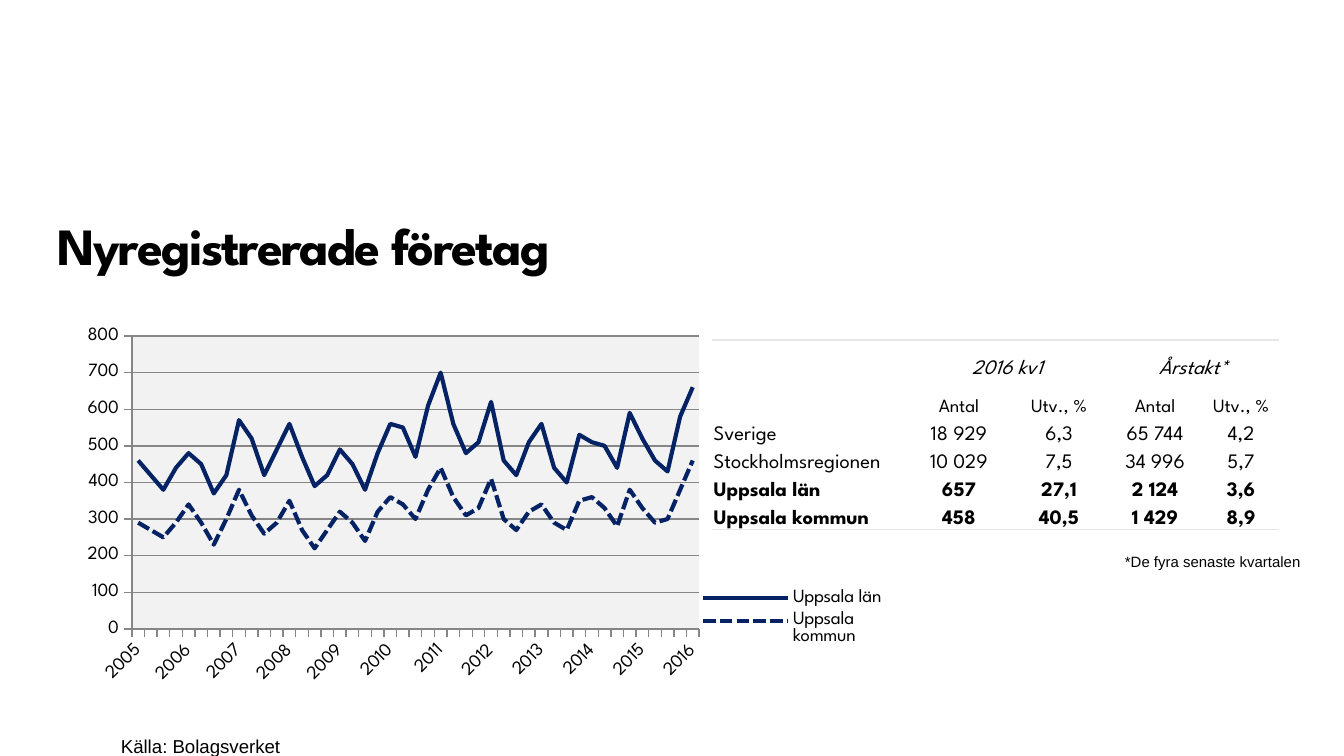
from lxml import etree
from pptx import Presentation
from pptx.chart.data import CategoryChartData
from pptx.dml.color import RGBColor
from pptx.enum import chart as charts, dml, text as texts
from pptx.oxml import parse_xml
from pptx.oxml import ns
from pptx.util import Inches, Pt

COLORS = {"black": "000000", "navy": "052364", "plot": "F2F2F2", "axis": "868686", "rule": "E6E6E6"}
HEADING_FONT, BODY_FONT = "League Spartan", "Arial"
PLAIN_TABLE_STYLE = "{2D5ABB26-0587-4C30-8999-92F81FD0307C}"
YEARS = [str(year) for year in range(2005, 2017)]
REGISTRATIONS = {
    "Uppsala län": [
        460, 420, 380, 440, 480, 450, 370, 420, 570, 520, 420, 490, 560, 470, 390,
        420, 490, 450, 380, 480, 560, 550, 470, 610, 700, 560, 480, 510, 620, 460,
        420, 510, 560, 440, 400, 530, 510, 500, 440, 590, 520, 460, 430, 580, 660],
    "Uppsala kommun": [
        290, 270, 250, 290, 340, 290, 230, 300, 380, 310, 260, 290, 350, 270, 220,
        270, 320, 290, 240, 320, 360, 340, 300, 380, 440, 360, 310, 330, 410, 300,
        270, 320, 340, 290, 270, 350, 360, 330, 280, 380, 330, 290, 300, 380, 460],
}
TABLE_ROWS = [
    ["", "2016 kv1", "", "Årstakt*", ""],
    ["", "Antal", "Utv., %", "Antal", "Utv., %"],
    ["Sverige", "18 929", "6,3", "65 744", "4,2"],
    ["Stockholmsregionen", "10 029", "7,5", "34 996", "5,7"],
    ["Uppsala län", "657", "27,1", "2 124", "3,6"],
    ["Uppsala kommun", "458", "40,5", "1 429", "8,9"],
]
ROW_HEIGHTS = [0.29, 0.28] + [0.21] * 4


def rgb(name):
    """Return a palette colour."""
    return RGBColor.from_string(COLORS[name])


def write_text(frame, content, size, font=HEADING_FONT, bold=False, italic=False,
               align=texts.PP_ALIGN.LEFT, line_spacing=None, tracking=None):
    """Write one formatted paragraph, or only set the size of an empty one."""
    paragraph = frame.paragraphs[0]
    if not content:
        etree.SubElement(paragraph._p, ns.qn("a:endParaRPr"), sz=str(size * 100))
        return
    paragraph.alignment = align
    if line_spacing:
        paragraph.line_spacing = Pt(line_spacing)
    run = paragraph.add_run()
    run.text = content
    run.font.name, run.font.size = font, Pt(size)
    run.font.bold, run.font.italic = bold, italic
    run.font.color.rgb = rgb("black")
    if tracking:
        run.font._element.set("spc", str(int(tracking * 100)))


def add_label(slide, box, content, size, **style):
    """Add a text box without insets."""
    frame = slide.shapes.add_textbox(*map(Inches, box)).text_frame
    frame.word_wrap = True
    frame.margin_left = frame.margin_top = frame.margin_right = frame.margin_bottom = 0
    write_text(frame, content, size, **style)


def set_border(cell, side):
    """Draw a thin rule on one side of a table cell."""
    properties = cell._tc.get_or_add_tcPr()
    properties.insert(0, parse_xml(
        f'<a:{side} {ns.nsdecls("a")} w="12700"><a:solidFill>'
        f'<a:srgbClr val="{COLORS["rule"]}"/></a:solidFill></a:{side}>'))


def add_figures_table(slide, box):
    """Add the table of counts and growth rates."""
    table = slide.shapes.add_table(len(TABLE_ROWS), 5, *map(Inches, box)).table
    table.first_row = table.horz_banding = False
    table._tbl.tblPr.find(ns.qn("a:tableStyleId")).text = PLAIN_TABLE_STYLE
    for column, width in zip(table.columns, [1.45, 0.77, 0.72, 0.71, 0.57]):
        column.width = Inches(width)
    for left in (1, 3):
        table.cell(0, left).merge(table.cell(0, left + 1))
    for row_index, values in enumerate(TABLE_ROWS):
        table.rows[row_index].height = Inches(ROW_HEIGHTS[row_index])
        for column_index, value in enumerate(values):
            cell = table.cell(row_index, column_index)
            cell.fill.background()
            cell.vertical_anchor = texts.MSO_ANCHOR.BOTTOM
            cell.margin_left = cell.margin_right = cell.margin_top = Inches(0.01)
            cell.margin_bottom = 0
            write_text(cell.text_frame, value, 10 if row_index == 1 else 11,
                       bold=row_index >= 4, italic=row_index == 0,
                       align=texts.PP_ALIGN.CENTER if column_index else texts.PP_ALIGN.LEFT)
            if row_index == 0:
                set_border(cell, "lnT")
            elif row_index == len(TABLE_ROWS) - 1:
                set_border(cell, "lnB")


def place(element, position, x, y, width, height, inner=False):
    """Give a chart part a manual layout in fractions of the chart."""
    for layout in element.findall(ns.qn("c:layout")):
        element.remove(layout)
    target = '<c:layoutTarget val="inner"/>' if inner else ""
    element.insert(position, parse_xml(
        f'<c:layout {ns.nsdecls("c")}><c:manualLayout>{target}<c:xMode val="edge"/>'
        f'<c:yMode val="edge"/><c:x val="{x}"/><c:y val="{y}"/><c:w val="{width}"/>'
        f'<c:h val="{height}"/></c:manualLayout></c:layout>'))


def format_axes(chart):
    """Format both axes and the gridlines."""
    values, categories = chart.value_axis, chart.category_axis
    values.minimum_scale, values.maximum_scale, values.major_unit = 0, 800, 100
    values.tick_labels.number_format = "#,##0"
    values.tick_labels.number_format_is_linked = False
    values.has_major_gridlines = True
    for line in (values.format.line, categories.format.line, values.major_gridlines.format.line):
        line.color.rgb, line.width = rgb("axis"), Pt(0.75)
    for axis in (values, categories):
        axis.major_tick_mark = charts.XL_TICK_MARK.OUTSIDE
        axis.tick_labels.font.size = Pt(10)
    categories._element.txPr.find(ns.qn("a:bodyPr")).set("rot", "-2700000")
    no_multi_level = categories._element.find(ns.qn("c:noMultiLvlLbl"))
    for tag, step in (("c:tickLblSkip", "4"), ("c:tickMarkSkip", "1")):
        no_multi_level.addprevious(etree.Element(ns.qn(tag), val=step))


def add_registrations_chart(slide, box):
    """Add the quarterly line chart with its legend."""
    data = CategoryChartData(number_format="General")
    quarters = [label for year in YEARS for label in (year, "", "", "")]
    data.categories = quarters[:len(REGISTRATIONS["Uppsala län"])]
    for name, values in REGISTRATIONS.items():
        data.add_series(name, values)
    chart = slide.shapes.add_chart(charts.XL_CHART_TYPE.LINE, *map(Inches, box), data).chart
    chart.has_title = False
    chart.font.name, chart.font.size = HEADING_FONT, Pt(10)
    chart.font.color.rgb = rgb("black")
    format_axes(chart)

    chart.plots[0].vary_by_categories = False
    dashes = (dml.MSO_LINE.SOLID, dml.MSO_LINE.SQUARE_DOT)
    for series, dash in zip(chart.plots[0].series, dashes):
        series.smooth = False
        series.marker.style = charts.XL_MARKER_STYLE.NONE
        line = series.format.line
        line.color.rgb, line.width, line.dash_style = rgb("navy"), Pt(2.25), dash

    chart.has_legend = True
    chart.legend.position = charts.XL_LEGEND_POSITION.RIGHT
    chart.legend.include_in_layout = False
    place(chart.legend._element, 1, 0.74, 0.71, 0.22, 0.18)
    plot_area = chart._chartSpace.chart.plotArea
    place(plot_area, 0, 0.07, 0.04, 0.67, 0.79, inner=True)
    plot_area.append(parse_xml(
        f'<c:spPr {ns.nsdecls("c", "a")}><a:solidFill>'
        f'<a:srgbClr val="{COLORS["plot"]}"/></a:solidFill></c:spPr>'))


def main():
    """Build and save the presentation."""
    presentation = Presentation()
    presentation.slide_width, presentation.slide_height = Inches(10), Inches(10 * 9 / 16)
    slide = presentation.slides.add_slide(presentation.slide_layouts[6])
    add_label(slide, (0.43, 1.59, 6.21, 0.8), "Nyregistrerade företag", 28,
              bold=True, line_spacing=33.6, tracking=-0.9)
    add_figures_table(slide, (5.3, 2.53, 4.22, sum(ROW_HEIGHTS)))
    add_label(slide, (0.9, 5.3, 1.4, 0.42), "Källa: Bolagsverket", 10, font=BODY_FONT, line_spacing=24)
    add_label(slide, (8.37, 3.91, 1.4, 1), "*De fyra senaste kvartalen", 8, font=BODY_FONT, line_spacing=24)
    add_registrations_chart(slide, (0.54, 2.39, 6.3, 2.76))
    presentation.save("out.pptx")


if __name__ == "__main__":
    main()
